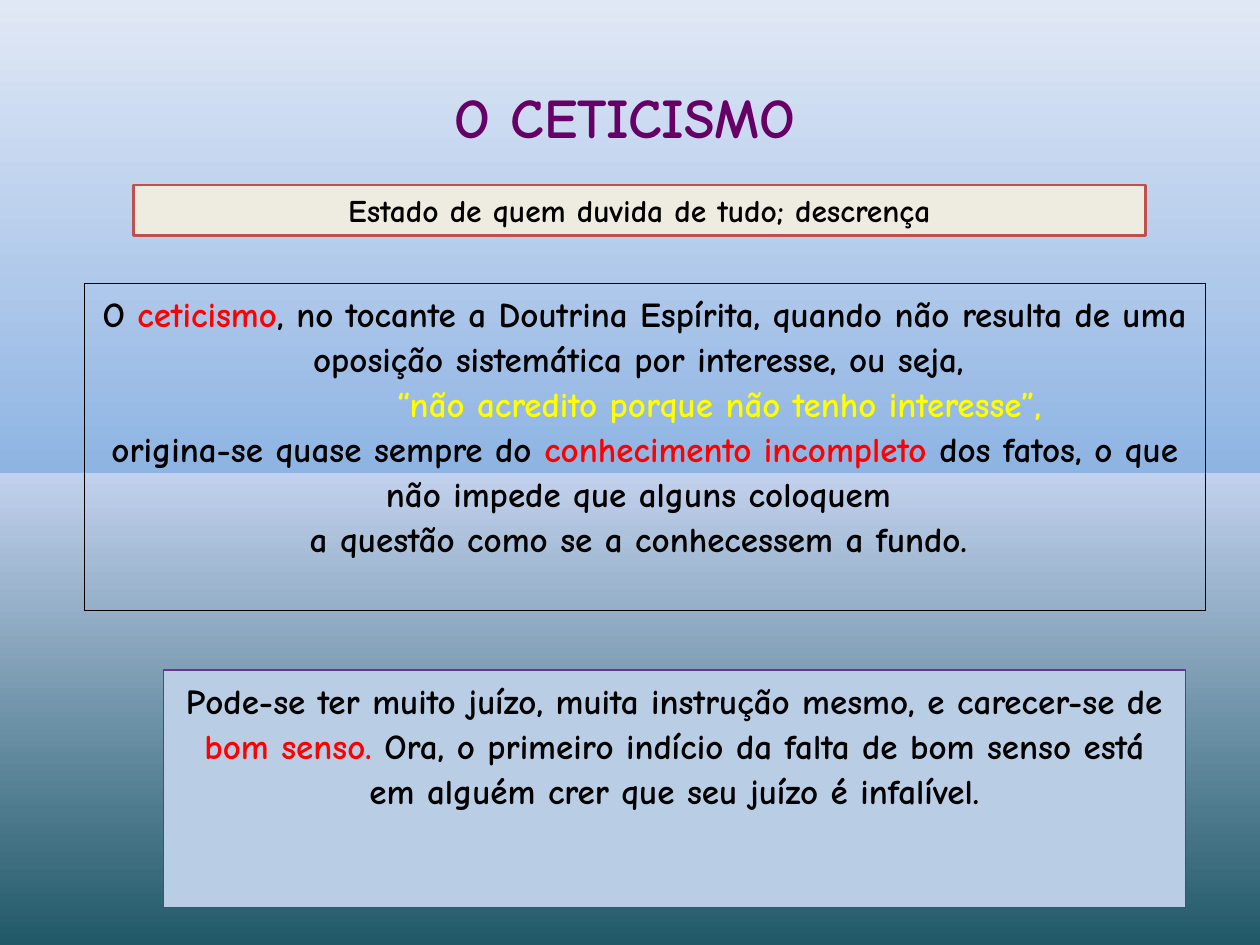
"""Build the slide on scepticism: title, definition and two text panels."""
from lxml import etree
from pptx import Presentation
from pptx.dml.color import RGBColor
from pptx.enum.shapes import MSO_SHAPE
from pptx.enum.text import MSO_ANCHOR, MSO_AUTO_SIZE, PP_ALIGN
from pptx.oxml.ns import qn
from pptx.util import Cm, Pt

RECT = MSO_SHAPE.RECTANGLE
TOP, MIDDLE = MSO_ANCHOR.TOP, MSO_ANCHOR.MIDDLE
CENTER = PP_ALIGN.CENTER
FIXED = MSO_AUTO_SIZE.NONE

FONT = "Comic Neue"
BLACK = RGBColor(0, 0, 0)
RED = RGBColor(0xFF, 0, 0)
YELLOW = RGBColor(0xFF, 0xFF, 0)
PLUM = RGBColor(0x66, 0, 0x66)
CREAM = RGBColor(0xEE, 0xEC, 0xE1)
BRICK = RGBColor(0xC0, 0x50, 0x4D)
SKY = RGBColor(0xB9, 0xCD, 0xE5)
VIOLET = RGBColor(0x70, 0x30, 0xA0)

STOPS = [
    (0, RGBColor(0x21, 0x59, 0x68)),
    (50, RGBColor(0xC2, 0xD1, 0xED)),
    (50, RGBColor(0x8E, 0xB4, 0xE3)),
    (100, RGBColor(0xE1, 0xE8, 0xF5)),
]
INDENT = Cm(3)

TITLE = {"box": (3.3, 1.52, 18.6, 1.63), "size": 32, "anchor": MIDDLE,
         "paras": [[("O CETICISMO", PLUM)]]}
PANELS = [
    {"box": (2.69, 3.73, 20.4, 1.02), "size": 18, "anchor": MIDDLE,
     "fill": CREAM, "line": (BRICK, 1.5),
     "paras": [[("Estado de quem duvida de tudo; descrença", BLACK)]]},
    {"box": (1.7, 5.71, 22.6, 6.6), "size": 20, "space": 1.07,
     "line": (BLACK, 0.75),
     "paras": [
         [("O ", BLACK), ("ceticismo", RED),
          (", no tocante a Doutrina Espírita, quando não resulta de uma "
           "oposição sistemática por interesse, ou seja, ", BLACK)],
         [("“não acredito porque não tenho interesse”,", YELLOW)],
         [("origina-se quase sempre do ", BLACK),
          ("conhecimento incompleto ", RED),
          ("dos fatos, o que não impede que alguns coloquem ", BLACK)],
         [("a questão como se a conhecessem a fundo. ", BLACK)],
     ]},
    {"box": (3.3, 13.51, 20.6, 4.78), "size": 20, "space": 1.07,
     "fill": SKY, "line": (VIOLET, 0.75),
     "paras": [
         [("Pode-se ter muito juízo, muita instrução mesmo, e carecer-se de ",
           BLACK),
          ("bom senso. ", RED),
          ("Ora, o primeiro indício da falta de bom senso está em alguém "
           "crer que seu juízo é infalível.", BLACK)],
     ]},
]


def paint(slide):
    fill = slide.background.fill
    fill.gradient()
    fill.gradient_angle = 90
    stops = slide.element.find(".//" + qn("a:gsLst"))
    for old in list(stops):
        stops.remove(old)
    for pos, color in STOPS:
        stop = etree.SubElement(stops, qn("a:gs"), pos=str(pos * 1000))
        etree.SubElement(stop, qn("a:srgbClr"), val=str(color))


def write(shape, item):
    frame = shape.text_frame
    frame.word_wrap = True
    frame.auto_size = FIXED
    frame.vertical_anchor = item.get("anchor", TOP)
    for i, runs in enumerate(item["paras"]):
        para = frame.add_paragraph() if i else frame.paragraphs[0]
        para.alignment = CENTER
        para.line_spacing = item.get("space", 1.0)
        para.space_before = para.space_after = Pt(0)
        para.font.name = FONT
        para.font.size = Pt(item["size"])
        para.font.bold = True
        for text, color in runs:
            run = para.add_run()
            run.text = text
            run.font.color.rgb = color
        if runs[0][1] == YELLOW:
            para._p.get_or_add_pPr().set("marL", str(INDENT))


def add_panel(slide, item):
    shape = slide.shapes.add_shape(RECT, *map(Cm, item["box"]))
    shape.shadow.inherit = False
    if "fill" in item:
        shape.fill.solid()
        shape.fill.fore_color.rgb = item["fill"]
    else:
        shape.fill.background()
    color, width = item["line"]
    shape.line.color.rgb = color
    shape.line.width = Pt(width)
    write(shape, item)


def main():
    deck = Presentation()
    deck.slide_width, deck.slide_height = Cm(25.4), Cm(19.05)
    slide = deck.slides.add_slide(deck.slide_layouts[5])
    paint(slide)
    title = slide.shapes.title
    title.left, title.top, title.width, title.height = map(Cm, TITLE["box"])
    write(title, TITLE)
    for item in PANELS:
        add_panel(slide, item)
    deck.save("out.pptx")


if __name__ == "__main__":
    main()
